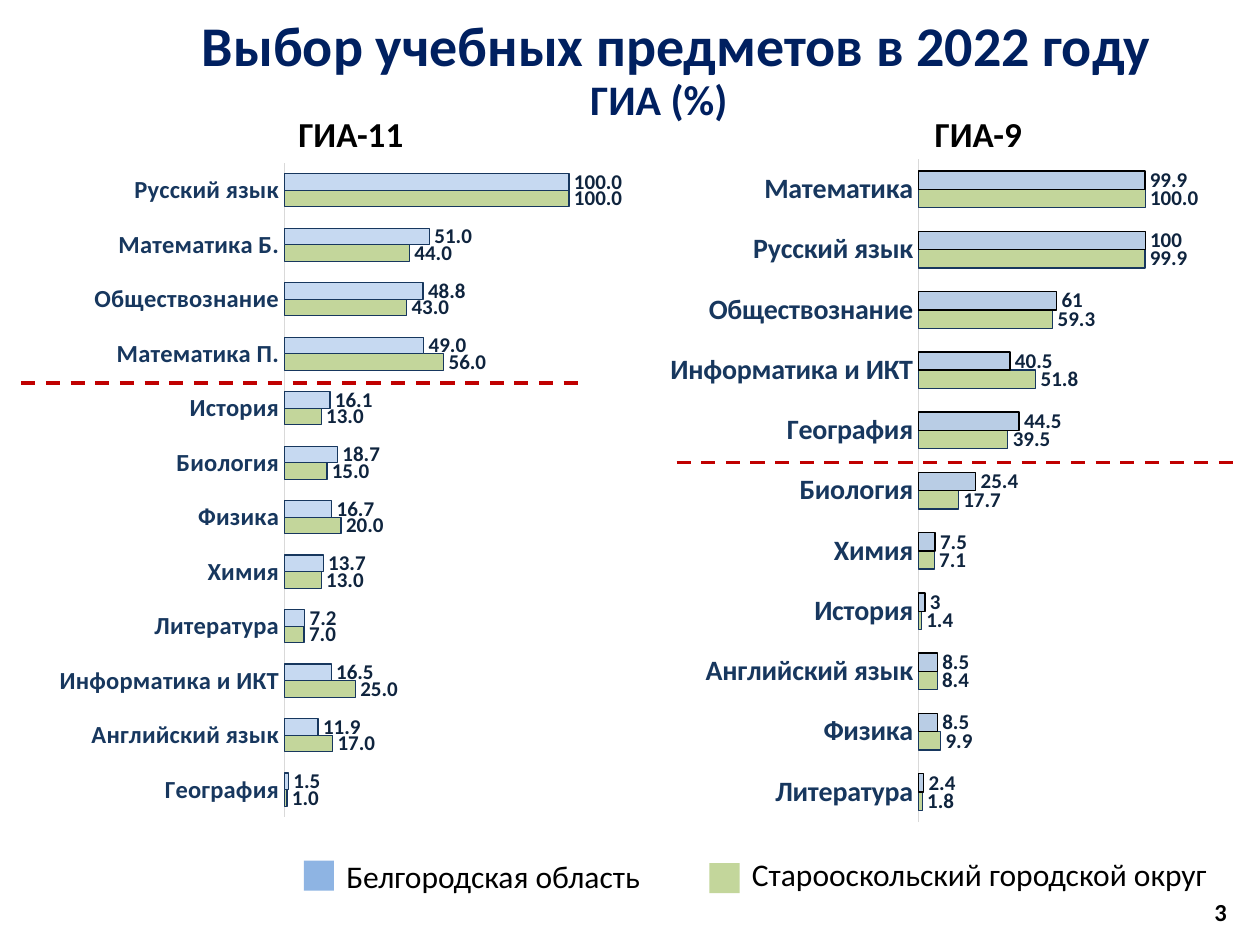
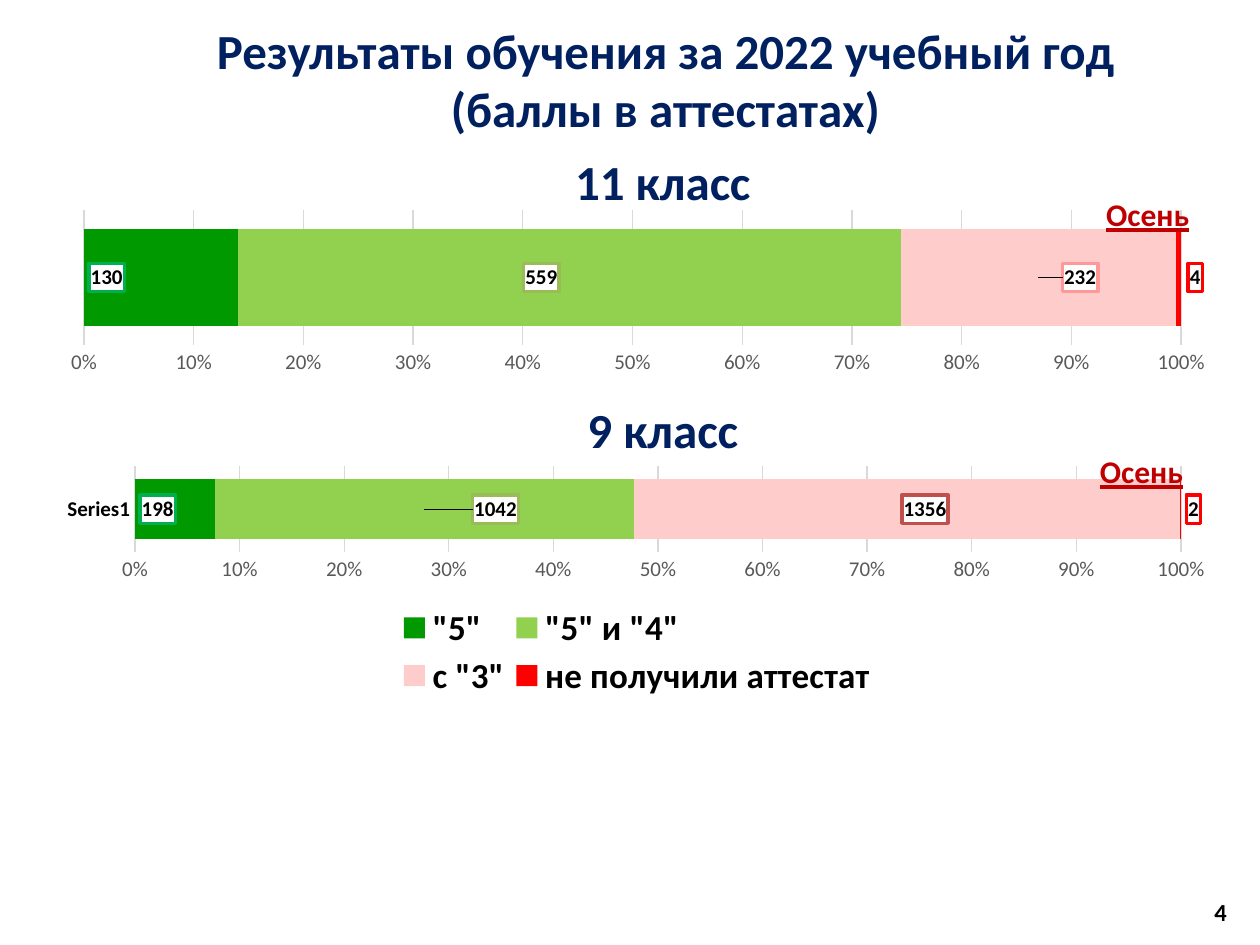
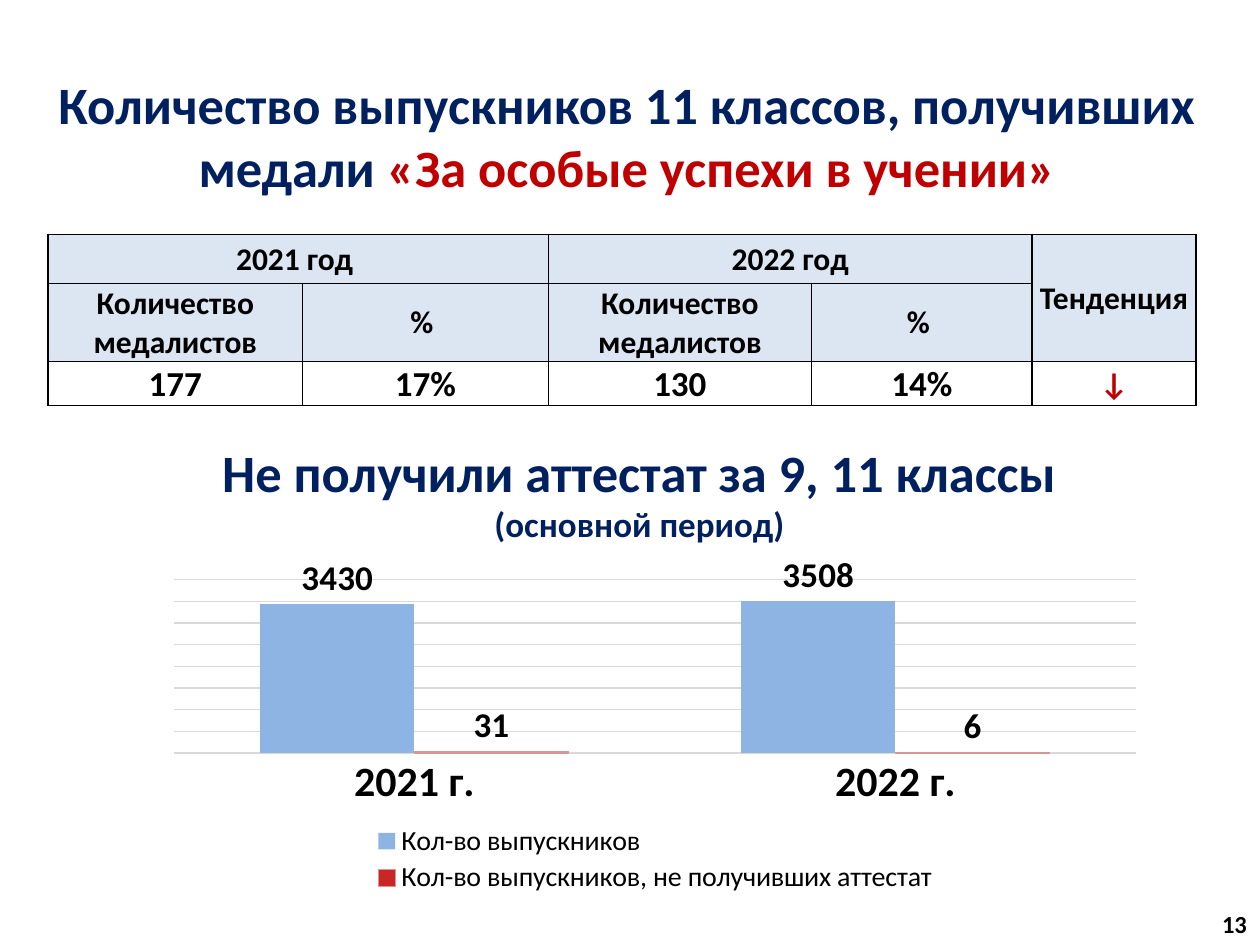
import pptx
import pptx.chart.data
import pptx.dml.color
import pptx.enum.chart
import pptx.enum.dml
import pptx.enum.shapes
import pptx.enum.text
import pptx.oxml
import pptx.oxml.ns
import pptx.util
from lxml import etree

Pt = pptx.util.Pt
RGB = pptx.dml.color.RGBColor
qn = pptx.oxml.ns.qn
XL = pptx.enum.chart.XL_CHART_TYPE
LABEL = pptx.enum.chart.XL_LABEL_POSITION
ALIGN = pptx.enum.text.PP_ALIGN
ANCHOR = pptx.enum.text.MSO_ANCHOR

FONT = "Calibri"
BLACK = RGB(0, 0, 0)
WHITE = RGB(255, 255, 255)
NAVY = RGB(0x00, 0x20, 0x60)
STEEL = RGB(0x17, 0x37, 0x5E)
INK = RGB(0x0F, 0x24, 0x3E)
GRAY = RGB(0x59, 0x59, 0x59)
GRID = RGB(0xD9, 0xD9, 0xD9)
CRIMSON = RGB(0xC0, 0x00, 0x00)
ROSE = RGB(0xD9, 0x96, 0x94)
BLUE = RGB(0x8E, 0xB4, 0xE3)
SKY = RGB(0xC6, 0xD9, 0xF1)
PALE_BLUE = RGB(0xB9, 0xCD, 0xE5)
HEADER = RGB(0xDC, 0xE6, 0xF2)
OLIVE = RGB(0xC3, 0xD6, 0x9B)
GREEN = RGB(0x00, 0x99, 0x00)
LIME = RGB(0x92, 0xD0, 0x50)
PINK = RGB(0xFF, 0xCC, 0xCC)
RED = RGB(0xFF, 0x00, 0x00)
GRADE_COLORS = (GREEN, LIME, PINK, RED)


def style(font, size, color=BLACK, bold=True):
    font.name, font.size, font.bold = FONT, Pt(size), bold
    font.color.rgb = color


def add_text(s, box, text, size, color=BLACK, bold=True, align=ALIGN.LEFT,
             anchor=ANCHOR.TOP, wrap=True, underline=None):
    """Add a text box; text is one paragraph. Returns its text frame."""
    tf = s.shapes.add_textbox(*map(Pt, box)).text_frame
    tf.word_wrap, tf.vertical_anchor = wrap, anchor
    p = tf.paragraphs[0]
    p.text, p.alignment = text, align
    style(p.font, size, color, bold)
    p.font.underline = underline
    return tf


def add_heading(s, box, text, size, anchor=ANCHOR.TOP):
    return add_text(s, box, text, size, NAVY, align=ALIGN.CENTER, anchor=anchor)


def add_page_number(s, number, left=686.9, top=509):
    add_text(s, (left, top, 30.2, 28.8), number, 14)


def add_key(s, left, top, color, text_box, text):
    """Add one legend entry: a colour square and its caption."""
    sp = s.shapes.add_shape(pptx.enum.shapes.MSO_SHAPE.RECTANGLE,
                            Pt(left), Pt(top), Pt(17.2), Pt(17.2))
    sp.shadow.inherit = False
    sp.fill.solid()
    sp.fill.fore_color.rgb = color
    sp.line.fill.background()
    add_text(s, text_box, text, 18, bold=False, align=ALIGN.JUSTIFY)


def add_divider(s, left, y):
    line = s.shapes.add_connector(pptx.enum.shapes.MSO_CONNECTOR.STRAIGHT,
                                  Pt(left), Pt(y), Pt(left + 323.3), Pt(y))
    line.line.color.rgb = CRIMSON
    line.line.width = Pt(2)
    line.line.dash_style = pptx.enum.dml.MSO_LINE.DASH
    etree.SubElement(line._element.spPr, qn("a:effectLst"))


def set_layout(element, index, **values):
    """Give a chart element a manual layout as child number index."""
    for old in element.findall(qn("c:layout")):
        element.remove(old)
    layout = etree.Element(qn("c:layout"))
    manual = etree.SubElement(layout, qn("c:manualLayout"))
    for name, value in values.items():
        etree.SubElement(manual, qn(f"c:{name}")).set("val", str(value))
    element.insert(index, layout)


def set_area(element, index, box, frame, **target):
    """Place a chart element at a box given in slide points."""
    x, y = ((box[i] - frame[i]) / frame[i + 2] for i in (0, 1))
    w, h = (box[i] / frame[i] for i in (2, 3))
    set_layout(element, index, **target, xMode="edge", yMode="edge",
               x=round(x, 4), y=round(y, 4), w=round(w, 4), h=round(h, 4))


def add_chart(s, kind, frame, plot_box, categories, series, gap, colors,
              top_value=None, step=None, overlap=0):
    """Add a chart without value axis or grid; series holds (name, values)."""
    data = pptx.chart.data.CategoryChartData()
    data.categories = categories
    for name, values in series:
        data.add_series(name, values)
    chart = s.shapes.add_chart(kind, *map(Pt, frame), data).chart
    chart.has_title = chart.has_legend = False
    style(chart.font, 10, bold=False)
    set_area(chart._chartSpace.chart.plotArea, 0, plot_box, frame,
             layoutTarget="inner")
    plot = chart.plots[0]
    plot.gap_width, plot.overlap, plot.vary_by_categories = gap, overlap, False
    for ser, color in zip(plot.series, colors):
        ser.format.fill.solid()
        ser.format.fill.fore_color.rgb = color
        ser.invert_if_negative = False
    value_axis = chart.value_axis
    value_axis.visible = value_axis.has_major_gridlines = False
    value_axis.minimum_scale, value_axis.maximum_scale = 0, top_value
    value_axis.major_unit = step
    return chart


def style_category_axis(axis, size, color=BLACK):
    axis.major_tick_mark = pptx.enum.chart.XL_TICK_MARK.NONE
    style(axis.tick_labels.font, size, color)
    set_line(axis.format.line, GRID)


def set_line(line, color, width=0.75):
    line.color.rgb = color
    line.width = Pt(width)


def show_grid(axis):
    axis.has_major_gridlines = True
    set_line(axis.major_gridlines.format.line, GRID)


def show_values(ser, size, color=BLACK, number_format="General"):
    labels = ser.data_labels
    labels.show_value = True
    labels.position = LABEL.OUTSIDE_END
    labels.number_format, labels.number_format_is_linked = number_format, False
    style(labels.font, size, color)


def add_legend(chart, box, frame, size, bold):
    chart.has_legend = True
    chart.legend.position = pptx.enum.chart.XL_LEGEND_POSITION.BOTTOM
    chart.legend.include_in_layout = False
    style(chart.legend.font, size, bold=bold)
    set_area(chart.legend._element, 1, box, frame)


def add_subject_chart(s, frame, plot_box, subjects, size, colors, lines, formats):
    """Compare district and region; subjects are (name, region, district)."""
    names, region, district = zip(*reversed(subjects))
    chart = add_chart(s, XL.BAR_CLUSTERED, frame, plot_box, names,
                      [("Series 1", district), ("Series 2", region)],
                      130, colors, 120)
    style_category_axis(chart.category_axis, size, STEEL)
    for ser, line, number_format in zip(chart.plots[0].series, lines, formats):
        set_line(ser.format.line, line)
        show_values(ser, 12, INK, number_format)


def box_label(ser, border, shift):
    """Frame the value label of a bar and shift it by a share of the chart."""
    label = ser.points[0].data_label
    style(label.font, 12)
    label.position = LABEL.CENTER if shift else LABEL.INSIDE_BASE
    element = ser._element.xpath("c:dLbls/c:dLbl")[0]
    if shift:
        set_layout(element, 1, x=shift, y=0)
    element.find(qn("c:txPr")).addprevious(pptx.oxml.parse_xml(
        f'<c:spPr {pptx.oxml.ns.nsdecls("c", "a")}>'
        f'<a:solidFill><a:srgbClr val="{WHITE}"/></a:solidFill>'
        f'<a:ln w="{Pt(2)}"><a:solidFill><a:srgbClr val="{border}"/></a:solidFill>'
        '</a:ln></c:spPr>'))


def add_grade_chart(s, frame, plot_box, category, grades, gap, borders, shifts):
    chart = add_chart(s, XL.BAR_STACKED_100, frame, plot_box, [category],
                      [(name, [value]) for name, value in grades],
                      gap, GRADE_COLORS, 1, 0.1, 100)
    axis = chart.value_axis
    axis.visible = True
    axis.major_tick_mark = pptx.enum.chart.XL_TICK_MARK.NONE
    axis.format.line.fill.background()
    axis.tick_labels.number_format = "0%"
    axis.tick_labels.number_format_is_linked = False
    style(axis.tick_labels.font, 12, GRAY, False)
    show_grid(axis)
    for ser, border, shift in zip(chart.plots[0].series, borders, shifts):
        box_label(ser, border, shift)
    return chart


def set_borders(cell):
    tc_pr = cell._tc.get_or_add_tcPr()
    for i, side in enumerate(("lnL", "lnR", "lnT", "lnB")):
        tc_pr.insert(i, pptx.oxml.parse_xml(
            f'<a:{side} {pptx.oxml.ns.nsdecls("a")} w="{Pt(1)}">'
            f'<a:solidFill><a:srgbClr val="{BLACK}"/></a:solidFill></a:{side}>'))


def add_medal_table(s):
    rows = [("2021 год ", "", "2022 год", "", "Тенденция"),
            ("Количество медалистов", "% ") * 2 + ("",),
            ("177", "17%", "130", "14%", "↓")]
    widths, heights = (145.4, 140.4, 150.5, 126, 93.6), (28, 44.5, 25)
    table = s.shapes.add_table(3, 5, Pt(27.5), Pt(134), Pt(sum(widths)),
                               Pt(sum(heights))).table
    for col, width in zip(table.columns, widths):
        col.width = Pt(width)
    for r, (texts, height) in enumerate(zip(rows, heights)):
        table.rows[r].height = Pt(height)
        for c, text in enumerate(texts):
            cell = table.cell(r, c)
            cell.margin_left = cell.margin_right = cell.margin_top = Pt(0.7)
            cell.margin_bottom = 0
            cell.vertical_anchor = ANCHOR.BOTTOM if r == 2 and c < 3 else ANCHOR.MIDDLE
            cell.fill.solid()
            cell.fill.fore_color.rgb = WHITE if r == 2 else HEADER
            p = cell.text_frame.paragraphs[0]
            p.text, p.alignment = text, ALIGN.CENTER
            is_trend = text == "↓"
            style(p.font, 20 if r == 2 and not is_trend else 18,
                  CRIMSON if is_trend else BLACK)
            set_borders(cell)
    for start, end in (((0, 0), (0, 1)), ((0, 2), (0, 3)), ((0, 4), (1, 4))):
        table.cell(*start).merge(table.cell(*end))


def build_subjects(s):
    grade_11 = [
        ("Русский язык", 100, 100), ("Математика Б.", 51, 44),
        ("Обществознание", 48.8, 43), ("Математика П.", 49, 56),
        ("История", 16.1, 13), ("Биология", 18.7, 15), ("Физика", 16.7, 20),
        ("Химия", 13.7, 13), ("Литература", 7.2, 7),
        ("Информатика и ИКТ", 16.5, 25), ("Английский язык", 11.9, 17),
        ("География", 1.5, 1)]
    grade_9 = [
        ("Математика", 99.9, 100), ("Русский язык", 100, 99.9),
        ("Обществознание", 61, 59.3), ("Информатика и ИКТ", 40.5, 51.8),
        ("География", 44.5, 39.5), ("Биология", 25.4, 17.7),
        ("Химия", 7.5, 7.1), ("История", 3, 1.4),
        ("Английский язык", 8.5, 8.4), ("Физика", 8.5, 9.9),
        ("Литература", 2.4, 1.8)]
    add_subject_chart(s, (27.4, 85.7, 337.7, 389.5), (162.4, 93.2, 195.4, 373.7),
                      grade_11, 14, (OLIVE, SKY), (STEEL, STEEL),
                      ("#,##0.0", "0.0"))
    add_heading(s, (217.4, 28.8, 318.2, 45.4), "ГИА (%)", 24, ANCHOR.BOTTOM)
    add_heading(s, (88.6, 2.2, 596.2, 46.1),
                "Выбор учебных предметов в 2022 году", 32)
    add_page_number(s, "3")
    add_subject_chart(s, (377.3, 82.8, 310.3, 394.6), (524.7, 91, 155.7, 378.8),
                      grade_9, 16, (OLIVE, PALE_BLUE), (STEEL, BLACK),
                      ("0.0", "General"))
    add_key(s, 173.6, 491.8, BLUE, (190.8, 486, 338.4, 28.8),
            "Белгородская область ")
    add_key(s, 405.4, 493.2, OLIVE, (422.6, 485.3, 320.4, 28.8),
            "Старооскольский городской округ")
    for left, text in ((163.4, "ГИА-11"), (527, "ГИА-9")):
        add_text(s, (left, 60.5, 80.6, 31.7), text, 20)
    add_divider(s, 12.2, 218.9)
    add_divider(s, 386.6, 264.2)


def build_results(s):
    frame = (25.2, 263.5, 676.8, 139.7)
    chart = add_grade_chart(
        s, frame, (77.2, 266.3, 597.7, 49.2), "Series1",
        [('"5"', 198), ('"5" и "4"', 1042), ('с "3"', 1356),
         ("не получили аттестат", 2)],
        44, ("00B050", "9BBB59", "C0504D", "FF0000"), (0, 0.06, 0.015, 0.011))
    style_category_axis(chart.category_axis, 12)
    add_legend(chart, (224, 344, 280, 57), frame, 20, True)
    add_heading(s, (82.1, 7.9, 596.2, 74.9),
                "Результаты обучения за 2022 учебный год (баллы в аттестатах)", 28)
    add_page_number(s, "4")
    chart = add_grade_chart(
        s, (27.4, 118.1, 674.6, 97.9), (48, 120, 627, 77.2), "1",
        [("Series 1", 130), ("Series 2", 559), ("Series 3", 232), ("Series 4", 4)],
        39, ("00B050", "9BBB59", "FF9999", "FF0000"), (0, -0.024, 0.035, 0.014))
    chart.category_axis.visible = False
    for top, text in ((82.8, "11 класс"), (224.6, "9 класс")):
        add_heading(s, (80.6, top, 596.2, 41), text, 28)
    for left, top in ((625, 108), (621.4, 254.9)):
        add_text(s, (left, top, 62.6, 28.8), "Осень", 18, CRIMSON,
                 wrap=False, underline=True)


def build_medals(s):
    add_medal_table(s)
    tf = add_heading(s, (5, 37.4, 707, 79.9),
                     "Количество выпускников 11 классов, получивших медали ", 30)
    r = tf.paragraphs[0].add_run()
    r.text = "«За особые успехи в учении»"
    r.font.color.rgb = CRIMSON
    add_page_number(s, "13", 691.2, 516.2)
    tf = add_heading(s, (31, 247.7, 668.9, 67.7),
                     "Не получили аттестат за 9, 11 классы", 30)
    p = tf.add_paragraph()
    p.text, p.alignment = "(основной период)", ALIGN.CENTER
    style(p.font, 20, NAVY)

    frame = (87.8, 316.1, 572.4, 198.7)
    chart = add_chart(s, XL.COLUMN_CLUSTERED, frame, (99.4, 329.8, 549.8, 99.8),
                      ("2021 г.", "2022 г."),
                      [("Кол-во выпускников", (3430, 3508)),
                       ("Кол-во выпускников, не получивших аттестат", (31, 6))],
                      112, (BLUE, CRIMSON), 4000, 500)
    style_category_axis(chart.category_axis, 24)
    show_grid(chart.value_axis)
    for ser in chart.plots[0].series:
        show_values(ser, 20)
    failed = chart.plots[0].series[1]
    set_line(failed.format.line, ROSE)
    color = failed._element.xpath("c:spPr/a:solidFill/a:srgbClr")[0]
    etree.SubElement(color, qn("a:alpha")).set("val", "85000")
    add_legend(chart, (212, 469, 325, 44), frame, 16, False)


def main():
    prs = pptx.Presentation()
    prs.slide_width, prs.slide_height = Pt(720), Pt(540)
    for build in (build_subjects, build_results, build_medals):
        build(prs.slides.add_slide(prs.slide_layouts[6]))
    prs.save("out.pptx")


if __name__ == "__main__":
    main()
